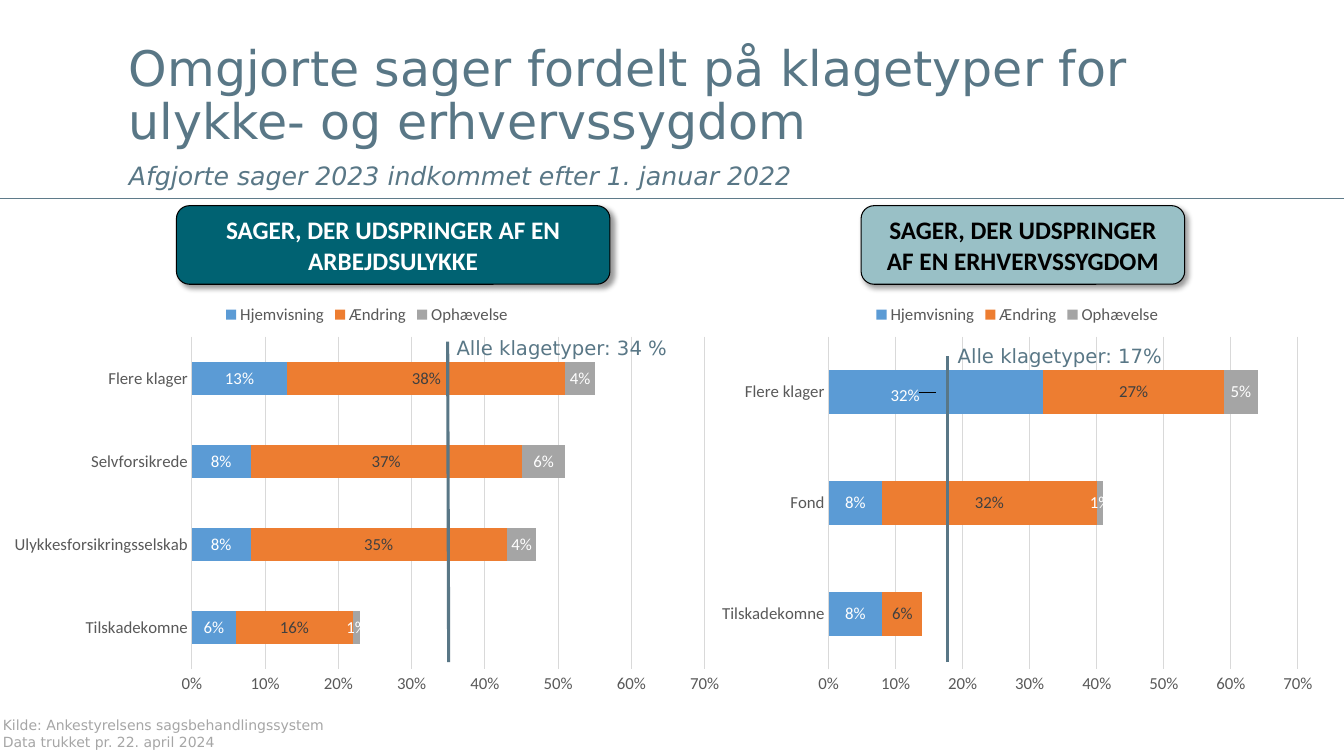
"""Builds a slide of reversed cases by complaint type for accidents and occupational diseases."""
from dataclasses import dataclass

from lxml import etree
from pptx import Presentation
from pptx import util as u
from pptx.chart import data
from pptx.dml import color
from pptx.enum import chart as charts
from pptx.enum import shapes, text
from pptx.oxml import ns, parse_xml


@dataclass(frozen=True)
class Theme:
    """Colours, fonts and type sizes of the slide."""
    slate: str = "597786"
    rule: str = "5F7B8A"
    teal: str = "006272"
    pale_teal: str = "99C0C6"
    black: str = "000000"
    white: str = "FFFFFF"
    source: str = "A6A6A6"
    axis_text: str = "595959"
    grid: str = "D9D9D9"
    series: tuple = (("5B9BD5", "FFFFFF"), ("ED7D31", "404040"), ("A5A5A5", "FFFFFF"))
    body_font: str = "DejaVu Sans"
    chart_font: str = "Calibri"
    title_size: int = 35
    heading_size: int = 18
    note_size: int = 14
    chart_size: int = 12
    source_size: int = 10


class SlideBuilder:
    """Draws styled elements on one slide."""

    def __init__(self, slide, theme):
        self.slide = slide
        self.theme = theme

    def style_font(self, font, size, rgb, name):
        """Set size, colour and typeface."""
        font.size = u.Pt(size)
        font.name = name
        font.color.rgb = color.RGBColor.from_string(rgb)

    def style_line(self, line, rgb, width):
        """Set a solid line."""
        line.color.rgb = color.RGBColor.from_string(rgb)
        line.width = u.Pt(width)

    def line(self, start, end, rgb, width):
        """Draw a straight line without a shadow."""
        ends = [u.Inches(value) for value in (*start, *end)]
        connector = self.slide.shapes.add_connector(shapes.MSO_CONNECTOR.STRAIGHT, *ends)
        self.style_line(connector.line, rgb, width)
        etree.SubElement(connector._element.spPr, ns.qn("a:effectLst"))

    def text_box(self, box, lines, rgb, wrap=True, spacing=None, gap=0):
        """Write lines of (wording, size, italic) in a text box."""
        shape = self.slide.shapes.add_textbox(*map(u.Inches, box))
        frame = shape.text_frame
        frame.word_wrap = wrap
        for index, (wording, size, italic) in enumerate(lines):
            paragraph = frame.add_paragraph() if index else frame.paragraphs[0]
            if spacing:
                paragraph.line_spacing = spacing
            if index and gap:
                paragraph.space_before = u.Pt(gap)
            run = paragraph.add_run()
            run.text = wording
            run.font.italic = italic
            self.style_font(run.font, size, rgb, self.theme.body_font)

    def heading(self, box, wording, fill, rgb):
        """Draw a rounded heading with a soft shadow."""
        shape = self.slide.shapes.add_shape(
            shapes.MSO_SHAPE.ROUNDED_RECTANGLE, *map(u.Inches, box))
        shape.fill.solid()
        shape.fill.fore_color.rgb = color.RGBColor.from_string(fill)
        self.style_line(shape.line, self.theme.black, 0.75)
        shape.shadow.inherit = False
        effects = shape._element.spPr.find(ns.qn("a:effectLst"))
        effects.append(parse_xml(
            f'<a:outerShdw {ns.nsdecls("a")} blurRad="{u.Pt(4)}" dist="{u.Pt(3)}" '
            f'dir="2700000" algn="tl" rotWithShape="0"><a:srgbClr val="{self.theme.black}">'
            '<a:alpha val="40000"/></a:srgbClr></a:outerShdw>'))
        frame = shape.text_frame
        frame.word_wrap = True
        frame.vertical_anchor = text.MSO_ANCHOR.MIDDLE
        paragraph = frame.paragraphs[0]
        paragraph.alignment = text.PP_ALIGN.CENTER
        run = paragraph.add_run()
        run.text = wording
        run.font.bold = True
        self.style_font(run.font, self.theme.heading_size, rgb, self.theme.chart_font)

    def style_chart_font(self, font, rgb):
        """Apply the chart typeface in a given colour."""
        self.style_font(font, self.theme.chart_size, rgb, self.theme.chart_font)

    def stacked_bars(self, box, categories, rows):
        """Draw a stacked bar chart of shares and return it."""
        theme = self.theme
        chart_data = data.CategoryChartData(number_format="0%")
        chart_data.categories = categories
        for name, values in rows.items():
            chart_data.add_series(name, values)
        chart = self.slide.shapes.add_chart(
            charts.XL_CHART_TYPE.BAR_STACKED, *map(u.Inches, box), chart_data).chart
        self.style_chart_font(chart.font, theme.black)
        chart.has_title = False
        chart.has_legend = True
        chart.legend.position = charts.XL_LEGEND_POSITION.TOP
        chart.legend.include_in_layout = False
        self.style_chart_font(chart.legend.font, theme.axis_text)
        for axis in (chart.category_axis, chart.value_axis):
            axis.major_tick_mark = axis.minor_tick_mark = charts.XL_TICK_MARK.NONE
            self.style_chart_font(axis.tick_labels.font, theme.axis_text)
        self.style_line(chart.category_axis.format.line, theme.grid, 0.75)
        value_axis = chart.value_axis
        value_axis.minimum_scale, value_axis.maximum_scale = 0, 0.7
        value_axis.major_unit = 0.1
        value_axis.tick_labels.number_format = "0%"
        value_axis.tick_labels.number_format_is_linked = False
        value_axis.format.line.fill.background()
        self.style_line(value_axis.major_gridlines.format.line, theme.grid, 0.75)
        plot = chart.plots[0]
        plot.gap_width, plot.overlap = 150, 100
        plot.vary_by_categories = False
        for series, (fill, label_colour) in zip(plot.series, theme.series):
            series.format.fill.solid()
            series.format.fill.fore_color.rgb = color.RGBColor.from_string(fill)
            labels = series.data_labels
            labels.show_value = True
            labels.number_format = "0%"
            labels.number_format_is_linked = False
            labels.position = charts.XL_LABEL_POSITION.CENTER
            self.style_chart_font(labels.font, label_colour)
        return chart

    def shift_label(self, series, index, x, y):
        """Move one data label by a share of the chart size."""
        label = series.points[index].data_label
        label.position = charts.XL_LABEL_POSITION.CENTER
        self.style_chart_font(label.font, self.theme.white)
        point_label = series.data_labels._element.find(ns.qn("c:dLbl"))
        point_label.insert(1, parse_xml(
            f'<c:layout {ns.nsdecls("c")}><c:manualLayout><c:x val="{x}"/>'
            f'<c:y val="{y}"/></c:manualLayout></c:layout>'))

    def hide_label(self, series, index):
        """Remove one data label."""
        series.data_labels._element.insert(0, parse_xml(
            f'<c:dLbl {ns.nsdecls("c")}><c:idx val="{index}"/><c:delete val="1"/></c:dLbl>'))


def main():
    """Build and save the slide."""
    presentation = Presentation()
    presentation.slide_width, presentation.slide_height = u.Inches(13.33), u.Inches(7.5)
    theme = Theme()
    builder = SlideBuilder(
        presentation.slides.add_slide(presentation.slide_layouts[6]), theme)

    builder.line((0, 1.97), (13.33, 1.97), theme.rule, 1.25)
    builder.stacked_bars(
        (0, 2.91, 7.28, 4.05),
        ("Tilskadekomne", "Ulykkesforsikringsselskab", "Selvforsikrede", "Flere klager"),
        {"Hjemvisning": (0.06, 0.08, 0.08, 0.13),
         "Ændring": (0.16, 0.35, 0.37, 0.38),
         "Ophævelse": (0.01, 0.04, 0.06, 0.04)})
    disease_chart = builder.stacked_bars(
        (7.04, 2.91, 6.1, 4.05),
        ("Tilskadekomne", "Fond", "Flere klager"),
        {"Hjemvisning": (0.08, 0.08, 0.32),
         "Ændring": (0.06, 0.32, 0.27),
         "Ophævelse": (0, 0.01, 0.05)})
    remitted, _, annulled = disease_chart.plots[0].series
    builder.shift_label(remitted, 2, -0.05, 0.01)
    builder.hide_label(annulled, 0)

    builder.text_box(
        (1.18, 0.39, 11.9, 0.68),
        [("Omgjorte sager fordelt på klagetyper for ulykke- og erhvervssygdom",
          theme.title_size, False),
         ("Afgjorte sager 2023 indkommet efter 1. januar 2022", theme.heading_size, True)],
        theme.slate, spacing=0.9, gap=10)
    builder.line((9.4, 6.57), (9.4, 3.53), theme.slate, 2.25)
    builder.line((4.45, 6.57), (4.44, 3.39), theme.slate, 2.25)
    for left, top, share in ((9.4, 3.36, "17%"), (4.43, 3.28, "34 %")):
        builder.text_box((left, top, 3.23, 0.34),
                         [(f"Alle klagetyper: {share}", theme.note_size, False)], theme.slate)
    builder.text_box(
        (-0.07, 7.06, 3.45, 0.44),
        [("Kilde: Ankestyrelsens sagsbehandlingssystem", theme.source_size, False),
         ("Data trukket pr. 22. april 2024", theme.source_size, False)],
        theme.source, wrap=False)
    builder.heading((8.54, 2.04, 3.21, 0.78), "SAGER, DER UDSPRINGER AF EN ERHVERVSSYGDOM",
                    theme.pale_teal, theme.black)
    builder.heading((1.75, 2.04, 4.3, 0.78), "SAGER, DER UDSPRINGER AF EN ARBEJDSULYKKE",
                    theme.teal, theme.white)
    presentation.save("out.pptx")


if __name__ == "__main__":
    main()
